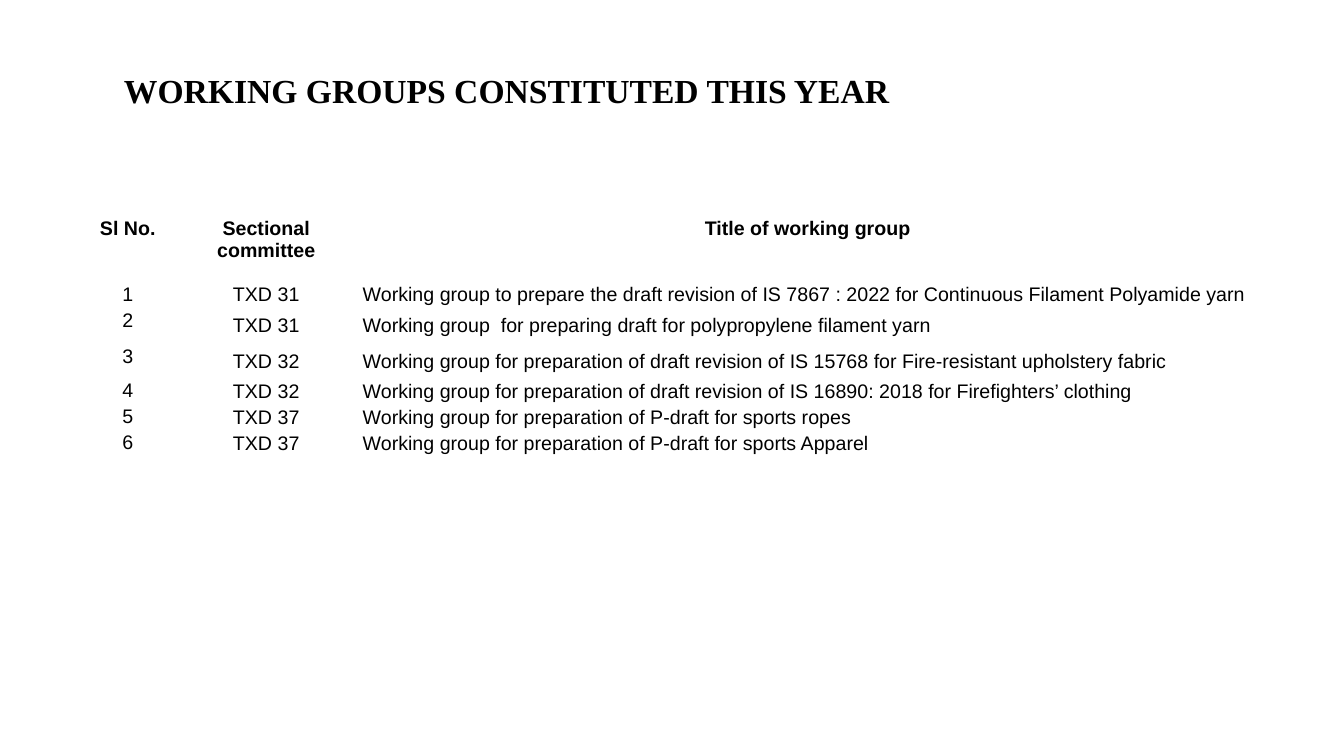
from dataclasses import dataclass

from pptx import Presentation
from pptx.dml.color import RGBColor as Rgb
from pptx.enum.text import MSO_ANCHOR as Anchor, MSO_AUTO_SIZE as Fit, PP_ALIGN as Align
from pptx.util import Cm, Pt


@dataclass(frozen=True)
class Theme:
    """Colours, fonts and type sizes of the slide."""
    ink: Rgb = Rgb(0, 0, 0)
    paper: Rgb = Rgb(255, 255, 255)
    serif: str = "Times New Roman"
    sans: str = "Arial"
    head: Pt = Pt(24)
    body: Pt = Pt(14)


LOOK = Theme()
WIDTHS = (2.18, 4.8, 22.63)
HEIGHTS = (1.65, 0.6, 0.91, 0.86, 0.6, 0.6, 0.6)
HEADS = ("Sl No.", "Sectional committee", "Title of working group ")
GROUPS = (
    ("TXD 31", "Working group to prepare the draft revision of IS 7867 : 2022 for Continuous Filament Polyamide yarn"),
    ("TXD 31", "Working group  for preparing draft for polypropylene filament yarn"),
    ("TXD 32", "Working group for preparation of draft revision of IS 15768 for Fire-resistant upholstery fabric"),
    ("TXD 32", "Working group for preparation of draft revision of IS 16890: 2018 for Firefighters’ clothing"),
    ("TXD 37", "Working group for preparation of P-draft for sports ropes"),
    ("TXD 37", "Working group for preparation of P-draft for sports Apparel"),
)


def apply(item, style):
    """Set each attribute of item from a dict."""
    for name, value in style.items():
        setattr(item, name, value)


def write(frame, text, align, style):
    """Put one styled paragraph in a text frame."""
    para = frame.paragraphs[0]
    para.alignment = align
    run = para.add_run()
    run.text = text
    run.font.color.rgb = LOOK.ink
    apply(run.font, style)


def add_title(slide, text):
    """Move and fill the title placeholder."""
    title = slide.shapes.title
    apply(title, dict(left=Cm(2.87), top=Cm(1.63), width=Cm(20.04), height=Cm(1.27)))
    apply(title.text_frame, dict(word_wrap=False, auto_size=Fit.SHAPE_TO_FIT_TEXT,
                                 vertical_anchor=Anchor.TOP))
    write(title.text_frame, text, Align.LEFT, dict(name=LOOK.serif, size=LOOK.head, bold=True))


def fill_cell(cell, text, row, col):
    """Format one cell by its place in the grid."""
    side = Cm(0.03 if row else 0.05)
    apply(cell, dict(margin_left=side, margin_right=side,
                     margin_top=Cm(0.03), margin_bottom=Cm(0.03),
                     vertical_anchor=Anchor.MIDDLE if row and col else Anchor.TOP))
    cell.fill.solid()
    cell.fill.fore_color.rgb = LOOK.paper
    align = Align.LEFT if row and col == 2 else Align.CENTER
    write(cell.text_frame, text, align, dict(name=LOOK.sans, size=LOOK.body, bold=row == 0))


def add_grid(slide, rows):
    """Add the table of working groups."""
    grid = slide.shapes.add_table(len(rows), len(WIDTHS), Cm(2.13), Cm(5.46),
                                  Cm(sum(WIDTHS)), Cm(sum(HEIGHTS))).table
    apply(grid, dict(first_row=False, horz_banding=False))
    for column, width in zip(grid.columns, WIDTHS):
        column.width = Cm(width)
    for line, height in zip(grid.rows, HEIGHTS):
        line.height = Cm(height)
    for row, texts in enumerate(rows):
        for col, text in enumerate(texts):
            fill_cell(grid.cell(row, col), text, row, col)


def main():
    """Build and save the slide."""
    deck = Presentation()
    apply(deck, dict(slide_width=Cm(33.87), slide_height=Cm(19.05)))
    slide = deck.slides.add_slide(deck.slide_layouts[5])
    add_grid(slide, [HEADS] + [(str(num), *group) for num, group in enumerate(GROUPS, 1)])
    add_title(slide, "WORKING GROUPS CONSTITUTED THIS YEAR")
    deck.save("out.pptx")


if __name__ == "__main__":
    main()
